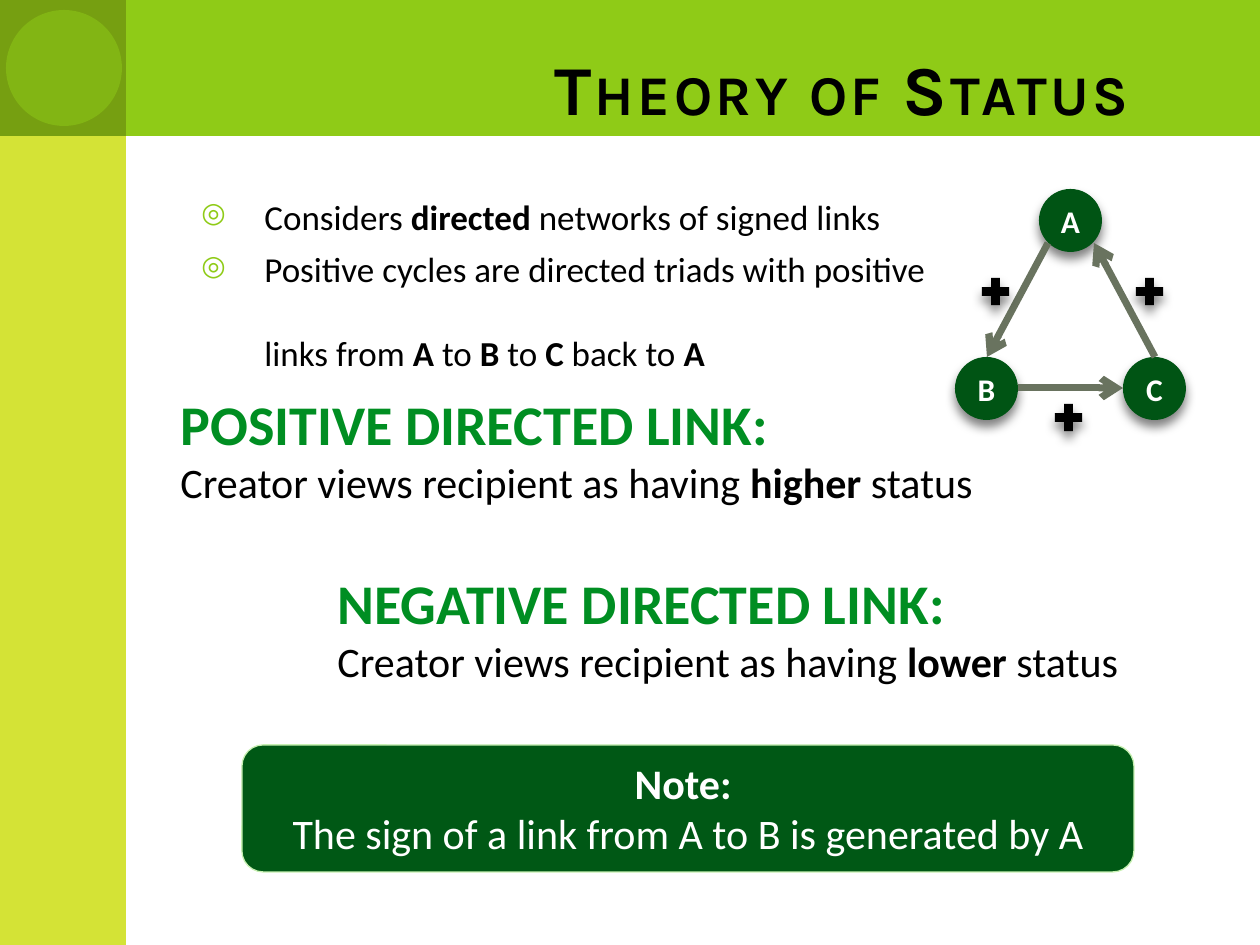
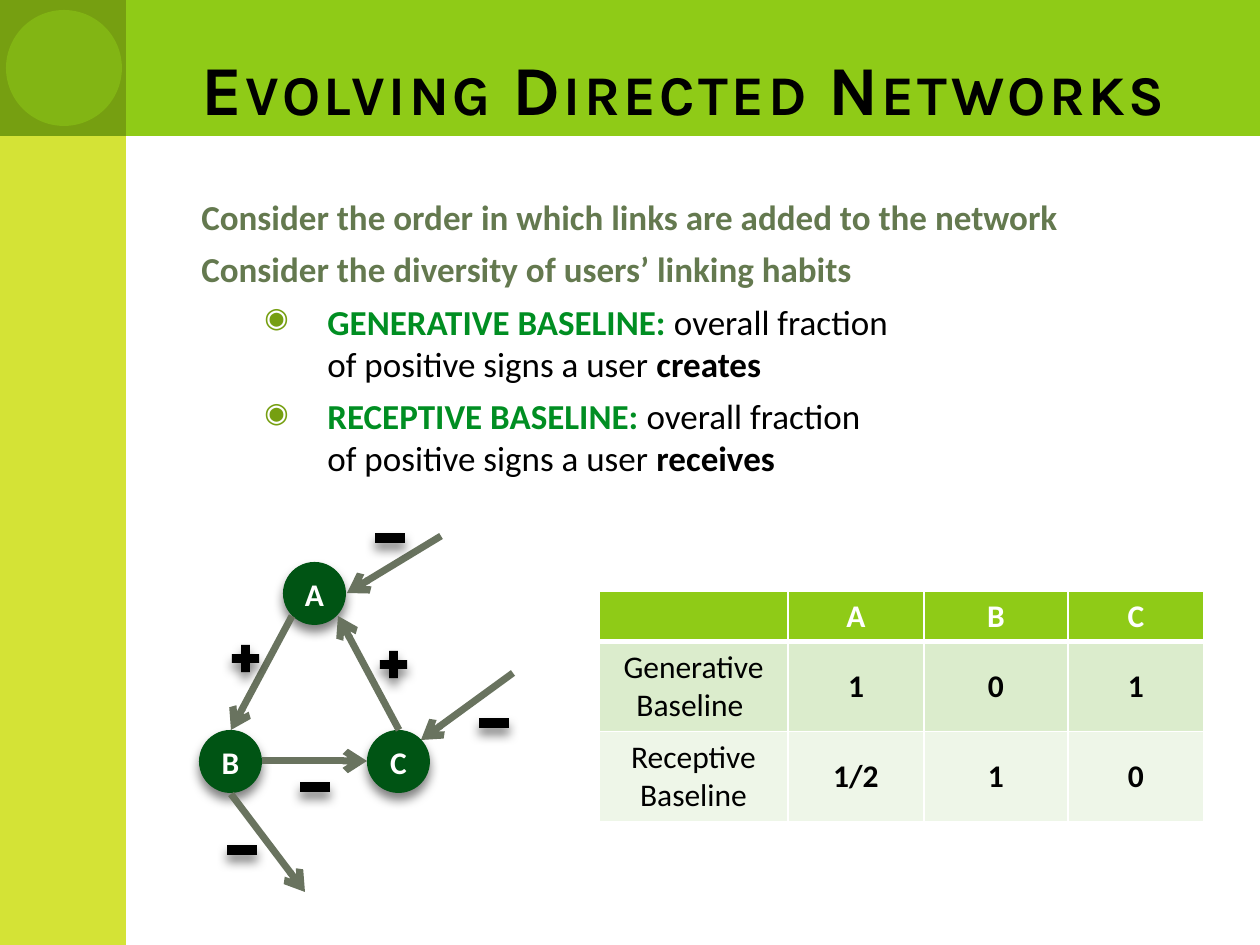
from lxml.etree import SubElement
from pptx import Presentation
from pptx.dml.color import RGBColor
from pptx.enum.shapes import MSO_CONNECTOR as Connector, MSO_SHAPE as Shape
from pptx.enum.text import MSO_ANCHOR as Anchor, PP_ALIGN as Align
from pptx.oxml.ns import qn
from pptx.util import Pt

PX = 914400 / 126
BODY_FONT, TITLE_FONT = "Calibri", "Karla"
COLORS = {
    "band": "8FCB17", "side": "D4E336", "corner": "769F11",
    "black": "000000", "white": "FFFFFF", "node": "005414",
    "note": "005815", "note_edge": "C7F0B2", "arrow": "69735F",
    "heading": "008E22", "lead": "64794F",
    "row_dark": "DBECCC", "row_light": "EEF6E8",
}
NODE, PLUS, MINUS = 63, 37, 42


def emu(*lengths):
    return [round(length * PX) for length in lengths]


def rgb(name):
    return RGBColor.from_string(COLORS[name])


def element(parent, tag, **attributes):
    return SubElement(parent, qn(tag), {key: str(value) for key, value in attributes.items()})


# Text
def style_font(font, size, color="black", bold=None, name=BODY_FONT):
    font.name, font.size, font.bold = name, Pt(size), bold
    font.color.rgb = rgb(color)


def add_spans(para, spans):
    """Each span is (text, bold) or (text, bold, color); a newline breaks the line."""
    for text, bold, *color in spans:
        for number, line in enumerate(text.split("\n")):
            if number:
                para.add_line_break()
            if line:
                span = para.add_run()
                span.text, span.font.bold = line, bold
                if color:
                    span.font.color.rgb = rgb(color[0])


def add_para(frame, spans, size, color="black", align=None, before=0):
    first = frame.paragraphs[0]
    para = first if not first.runs else frame.add_paragraph()
    para.alignment, para.space_before = align, Pt(before)
    style_font(para.font, size, color)
    add_spans(para, spans)
    return para


def add_text_box(page, left, top, width, height):
    box = page.shapes.add_textbox(*emu(left, top, width, height))
    box.text_frame.word_wrap = True
    return box.text_frame


def hang(para, indent, bullet=None, color=None):
    props = para._p.get_or_add_pPr()
    props.set("marL", str(emu(indent)[0]))
    props.set("indent", str(emu(-63)[0]))
    if bullet:
        parts = [element(props, "a:buClr"), element(props, "a:buSzPct", val=80000),
                 element(props, "a:buChar", char=bullet)]
        element(parts[0], "a:srgbClr", val=COLORS[color])
        for part in parts:
            props.find(qn("a:defRPr")).addprevious(part)


# Shapes
def add_block(page, kind, left, top, width, height, fill, edge=None):
    block = page.shapes.add_shape(kind, *emu(left, top, width, height))
    block.fill.solid()
    block.fill.fore_color.rgb = rgb(fill)
    if edge:
        block.line.color.rgb, block.line.width = rgb(edge), Pt(0.75)
    else:
        block.line.fill.background()
    block.shadow.inherit = False
    return block


def add_shadow(block):
    effects = block._element.spPr.find(qn("a:effectLst"))
    shadow = element(effects, "a:outerShdw", blurRad=Pt(6), dist=Pt(4),
                     dir=5400000, rotWithShape=0)
    element(element(shadow, "a:srgbClr", val=COLORS["black"]), "a:alpha", val=50000)


def add_node(page, label, left, top):
    node = add_block(page, Shape.OVAL, left, top, NODE, NODE, "node")
    add_shadow(node)
    frame = node.text_frame
    frame.vertical_anchor, frame.word_wrap = Anchor.MIDDLE, False
    add_para(frame, [(label, True)], 18, "white", Align.CENTER)


def add_sign(page, sign, left, top):
    kind, size = (Shape.MATH_PLUS, PLUS) if sign == "+" else (Shape.MATH_MINUS, MINUS)
    add_shadow(add_block(page, kind, left, top, size, size, "black"))


def add_arrow(page, *ends):
    arrow = page.shapes.add_connector(Connector.STRAIGHT, *emu(*ends))
    arrow.line.color.rgb, arrow.line.width = rgb("arrow"), Pt(4)
    element(arrow.line._get_or_add_ln(), "a:tailEnd", type="arrow")
    element(arrow._element.spPr, "a:effectLst")


def add_triad(page, left, top):
    """Cycle A to B to C and back to A."""
    for label, x, y in (("A", 84, 0), ("B", 0, 168), ("C", 168, 168)):
        add_node(page, label, left + x, top + y)
    for x1, y1, x2, y2 in ((93, 54, 32, 168), (200, 168, 139, 54), (63, 199, 168, 199)):
        add_arrow(page, left + x1, top + y1, left + x2, top + y2)


# Shared page frame
def add_page(deck, title):
    page = deck.slides.add_slide(deck.slide_layouts[6])
    add_block(page, Shape.RECTANGLE, 63, 0, 1197, 136, "band")
    add_block(page, Shape.RECTANGLE, 0, 0, 126, 945, "side")
    add_block(page, Shape.RECTANGLE, 0, 0, 126, 136, "corner")
    disc = add_block(page, Shape.OVAL, 6, 10, 116, 116, "band")
    element(disc._element.spPr.find(".//" + qn("a:srgbClr")), "a:alpha", val=50000)

    frame = add_text_box(page, 189, -21, 1008, 157)
    frame.vertical_anchor = Anchor.BOTTOM
    para = frame.paragraphs[0]
    para.alignment, para.line_spacing = Align.RIGHT, Pt(36)
    span = para.add_run()
    span.text = title
    style_font(span.font, 40, bold=True, name=TITLE_FONT)
    props = span._r.get_or_add_rPr()
    props.set("cap", "small")
    props.set("spc", "200")
    return page


# Status page
def add_link_rule(page, left, top, kind, level):
    frame = add_text_box(page, left, top, 850, 131)
    add_para(frame, [(f"{kind} DIRECTED LINK:", True)], 32, "heading")
    add_para(frame, [("Creator views recipient as having ", False),
                     (level, True), (" status", False)], 24)


def add_note(page):
    note = add_block(page, Shape.ROUNDED_RECTANGLE, 242, 745, 892, 127, "note", "note_edge")
    frame = note.text_frame
    frame.word_wrap, frame.vertical_anchor = True, Anchor.TOP
    add_para(frame, [("Note: \n", True),
                     ("The sign of a link from A to B is generated by A", False)],
             24, "white", Align.CENTER)


def build_status_page(deck):
    page = add_page(deck, "Theory of Status")
    frame = add_text_box(page, 189, 189, 756, 157)
    points = (
        [("Considers ", False), ("directed", True), (" networks of signed links", False)],
        [("Positive cycles are directed triads with positive \nlinks from ", False),
         ("A", True), (" to ", False), ("B", True), (" to ", False), ("C", True),
         (" back to ", False), ("A", True)],
    )
    for spans in points:
        hang(add_para(frame, spans, 20, before=6), 63, "◎", "band")
    add_link_rule(page, 168, 383, "POSITIVE", "higher")
    add_link_rule(page, 325, 562, "NEGATIVE", "lower")
    add_note(page)
    add_triad(page, 955, 189)
    for left, top in ((977, 273), (1050, 399), (1131, 273)):
        add_sign(page, "+", left, top)


# Evolving networks page
def set_borders(cell, bottom):
    props = cell._tc.get_or_add_tcPr()
    for number, (side, width) in enumerate(zip("LRTB", (1, 1, 1, bottom))):
        line = element(props, f"a:ln{side}", w=Pt(width))
        element(element(line, "a:solidFill"), "a:srgbClr", val=COLORS["white"])
        props.insert(number, line)


def add_baseline_table(page):
    rows = (("", "A", "B", "C"),
            ("Generative\nBaseline ", "1", "0", "1"),
            ("Receptive\nBaseline", "1/2", "1", "0"))
    widths, heights = (189, 136, 144, 136), (50, 90, 90)
    fills = ("band", "row_dark", "row_light")
    table = page.shapes.add_table(
        3, 4, *emu(599, 591, sum(widths), sum(heights))).table
    for column, width in zip(table.columns, emu(*widths)):
        column.width = width
    for r, (texts, height, fill) in enumerate(zip(rows, emu(*heights), fills)):
        table.rows[r].height = height
        for c, text in enumerate(texts):
            cell = table.cell(r, c)
            cell.vertical_anchor = Anchor.MIDDLE
            cell.fill.solid()
            cell.fill.fore_color.rgb = rgb(fill)
            set_borders(cell, 1 if r else 3)
            for line in text.split("\n"):
                add_para(cell.text_frame, [(line, r == 0 or c > 0)], 18,
                         "black" if r else "white", Align.CENTER)


def build_evolving_page(deck):
    page = add_page(deck, "Evolving Directed Networks")
    frame = add_text_box(page, 189, 189, 998, 756)
    for text in ("Consider the order in which links are added to the network",
                 "Consider the diversity of users’ linking habits"):
        hang(add_para(frame, [(text, True)], 20, "lead", before=6), 63)
    for kind, action in (("GENERATIVE", "creates"), ("RECEPTIVE", "receives")):
        spans = [(f"{kind} BASELINE:", True, "heading"),
                 (" overall fraction \nof positive signs a user ", False), (action, True)]
        hang(add_para(frame, spans, 20, before=6), 126, "◉", "corner")
    add_baseline_table(page)
    add_triad(page, 199, 562)
    for ends in ((441, 536, 347, 593), (513, 673, 421, 740), (231, 794, 305, 892)):
        add_arrow(page, *ends)
    signs = (("+", 227, 640), ("+", 375, 646), ("−", 369, 517),
             ("−", 294, 766), ("−", 473, 702), ("−", 221, 829))
    for sign, left, top in signs:
        add_sign(page, sign, left, top)


def main():
    deck = Presentation()
    deck.slide_width, deck.slide_height = emu(1260, 945)
    build_status_page(deck)
    build_evolving_page(deck)
    deck.save("out.pptx")


if __name__ == "__main__":
    main()
